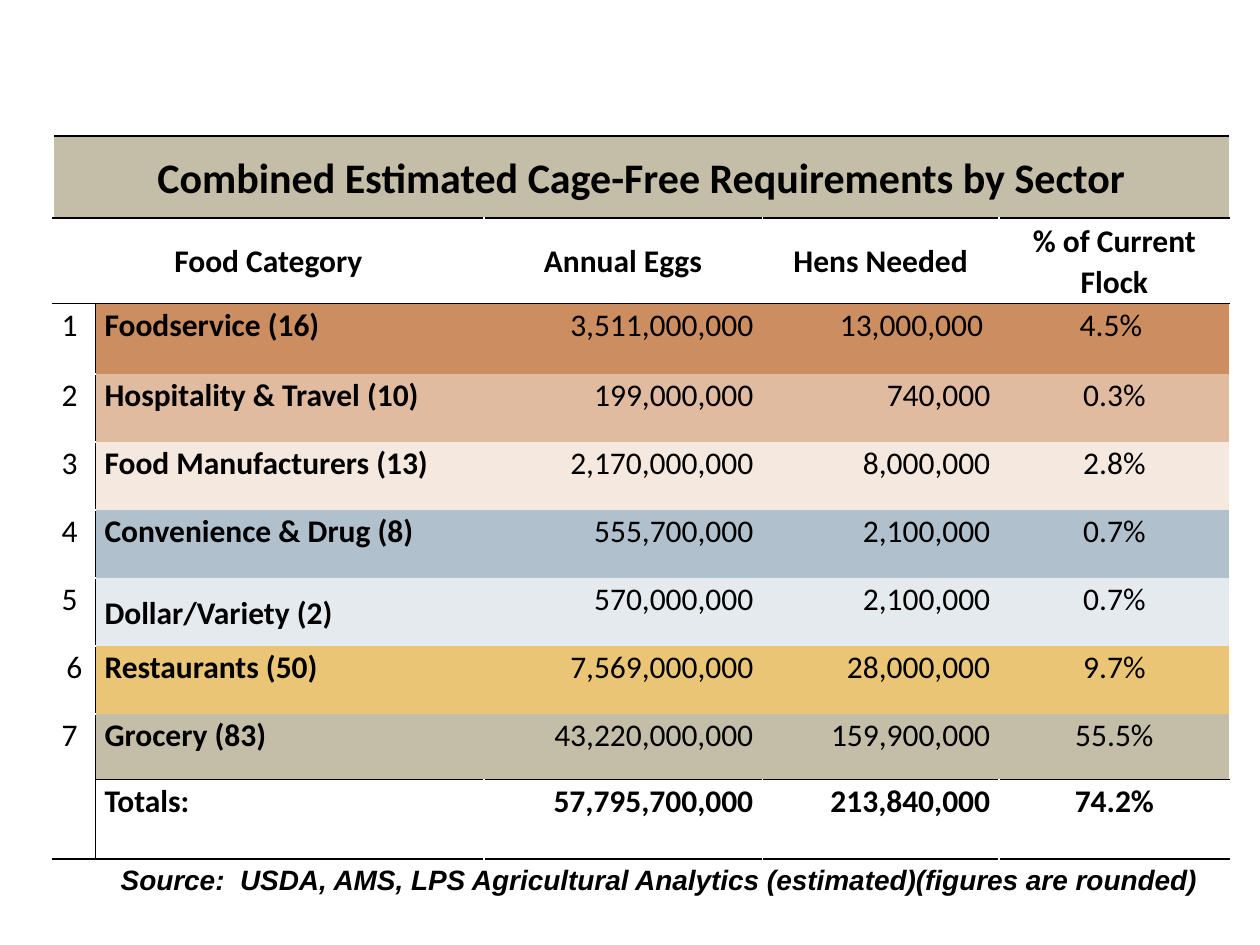
import pptx
import pptx.dml.color
import pptx.enum.text
import pptx.oxml
import pptx.oxml.ns
import pptx.util
from pptx.util import Inches

ALIGN = pptx.enum.text.PP_ALIGN
ANCHOR = pptx.enum.text.MSO_ANCHOR
BLACK, WHITE, TAN = "000000", "FFFFFF", "C4BEA8"


def rgb(value):
    return pptx.dml.color.RGBColor.from_string(value)


def set_borders(cell, colors):
    """Draw the left, right, top and bottom edges; None leaves an edge bare."""
    tc_pr = cell._tc.get_or_add_tcPr()
    for i, (side, color) in enumerate(zip("LRTB", colors)):
        fill = (f'<a:solidFill><a:srgbClr val="{color}"/></a:solidFill>'
                if color else "<a:noFill/>")
        tc_pr.insert(i, pptx.oxml.parse_xml(
            f'<a:ln{side} {pptx.oxml.ns.nsdecls("a")} w="12700">{fill}</a:ln{side}>'))


prs = pptx.Presentation()
prs.slide_width, prs.slide_height = Inches(10), Inches(7.5)
s = prs.slides.add_slide(prs.slide_layouts[6])

# Table contents: title, headings, sectors, totals
rows = [
    ["Combined Estimated Cage-Free Requirements by Sector", "", "", "", ""],
    ["Food Category", "", "Annual Eggs", "Hens Needed", "% of Current Flock"],
    ["1", "Foodservice (16)", "3,511,000,000", "13,000,000 ", "4.5% "],
    ["2", "Hospitality & Travel (10)", "199,000,000", "740,000", "0.3%"],
    ["3", "Food Manufacturers (13)", "2,170,000,000", "8,000,000", "2.8%"],
    ["4", "Convenience & Drug (8)", "555,700,000", "2,100,000", "0.7%"],
    ["5", "Dollar/Variety (2)", "570,000,000", "2,100,000", "0.7%"],
    ["6", "Restaurants (50)", "7,569,000,000", "28,000,000", "9.7%"],
    ["7", "Grocery (83)", "43,220,000,000", "159,900,000", "55.5%"],
    ["", "Totals:", "57,795,700,000", "213,840,000", "74.2%"],
]
fills = [TAN, WHITE, "CC8E60", "E0BB9F", "F4E8DF", "B1C0CD", "E5EAEE",
         "EBC576", TAN, WHITE]
col_widths = [0.34, 3.08, 2.21, 1.88, 1.83]
row_heights = [0.65, 0.68, 0.56] + [0.54] * 5 + [0.52, 0.63]
col_aligns = [ALIGN.LEFT, ALIGN.LEFT, ALIGN.RIGHT, ALIGN.RIGHT, ALIGN.CENTER]
first, total = 2, len(rows) - 1

table = s.shapes.add_table(len(rows), len(col_widths), Inches(0.42), Inches(1.08),
                           Inches(9.33), Inches(5.72)).table
table.first_row = table.horz_banding = False
for col, width in zip(table.columns, col_widths):
    col.width = Inches(width)
for row, height in zip(table.rows, row_heights):
    row.height = Inches(height)
table.cell(0, 0).merge(table.cell(0, 4))
table.cell(1, 0).merge(table.cell(1, 1))

for r, texts in enumerate(rows):
    header = r < first
    for c, text in enumerate(texts):
        cell = table.cell(r, c)
        cell.margin_left = cell.margin_right = Inches(0.07)
        cell.margin_top = cell.margin_bottom = 0
        middle = header or text.startswith("Dollar")
        cell.vertical_anchor = ANCHOR.MIDDLE if middle else ANCHOR.TOP
        cell.fill.solid()
        cell.fill.fore_color.rgb = rgb(WHITE if c == 0 and r > 0 else fills[r])

        # Text
        p = cell.text_frame.paragraphs[0]
        p.text = text
        p.alignment = ALIGN.CENTER if header or text == "6" else col_aligns[c]
        p.line_spacing = 1.07
        p.font.name = "Calibri"
        p.font.size = pptx.util.Pt(24 if r == 0 else 18)
        p.font.bold = header or r == total or c == 1
        p.font.color.rgb = rgb(BLACK)

        # Borders
        if header:
            edges = [WHITE, WHITE, BLACK, BLACK]
        elif c == 0:
            edges = [WHITE, BLACK, BLACK if r == first else WHITE,
                     BLACK if r == total else WHITE]
        elif r == total:
            edges = [BLACK if c == 1 else WHITE, WHITE, BLACK, BLACK]
        else:
            edges = [BLACK if c == 1 else None, WHITE if c == 4 else None,
                     BLACK if r == first else None,
                     BLACK if r == total - 1 else None]
        set_borders(cell, edges)

# Source line
tf = s.shapes.add_textbox(Inches(0.86), Inches(6.8), Inches(8.86), Inches(0.67)).text_frame
tf.word_wrap = False
tf.auto_size = pptx.enum.text.MSO_AUTO_SIZE.SHAPE_TO_FIT_TEXT
p = tf.paragraphs[0]
p.text = "Source:  USDA, AMS, LPS Agricultural Analytics (estimated)(figures are rounded)"
p.font.name = "Arial"
p.font.size = pptx.util.Pt(16)
p.font.bold = p.font.italic = True
p.font.color.rgb = rgb(BLACK)

prs.save("out.pptx")
